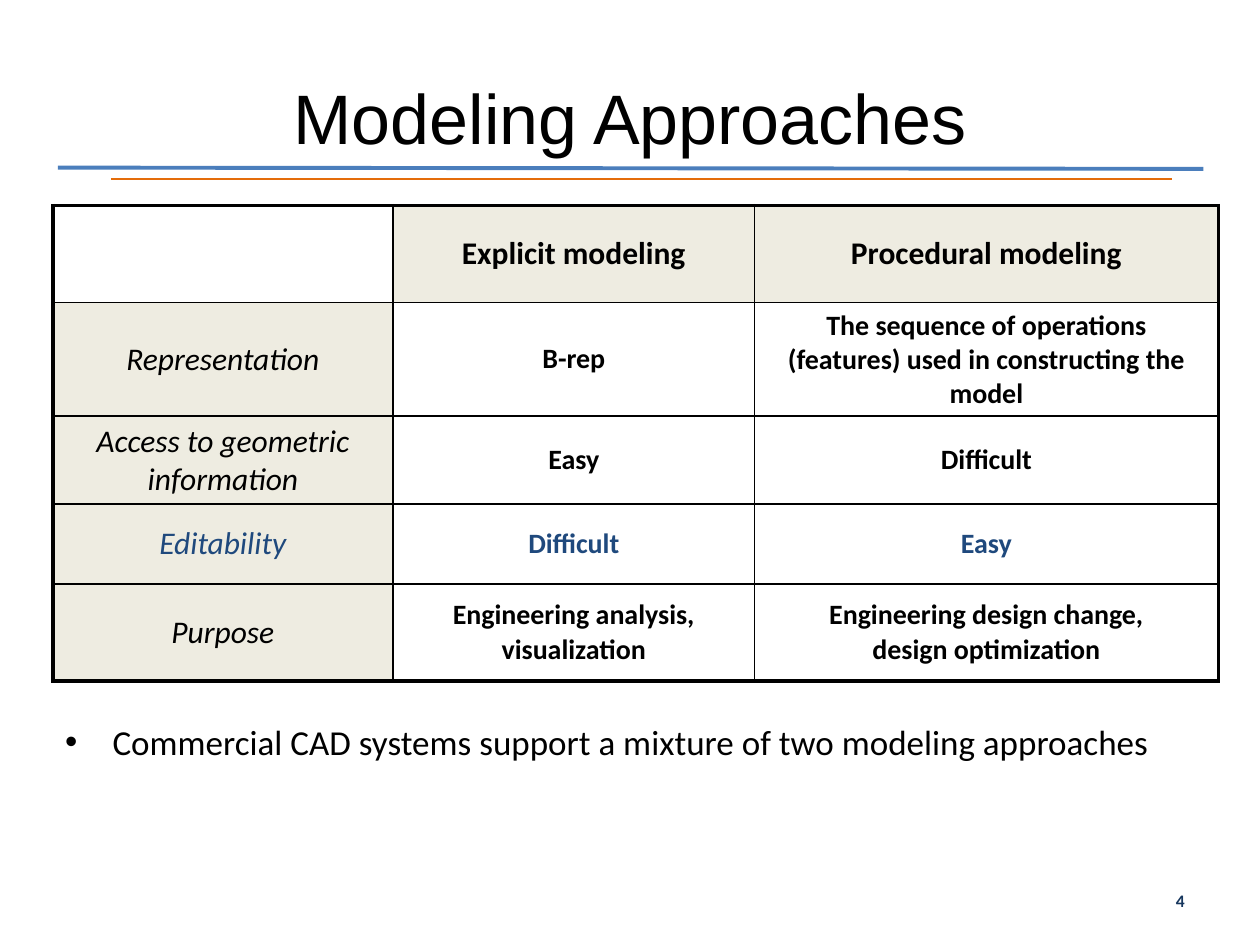
from dataclasses import dataclass

from lxml import etree
from pptx import Presentation
from pptx.dml.color import RGBColor
from pptx.enum import shapes, text
from pptx.oxml import ns
from pptx.util import Pt

BLACK = RGBColor(0x00, 0x00, 0x00)
NAVY = RGBColor(0x1F, 0x49, 0x7D)
PAGE_BLUE = RGBColor(0x17, 0x37, 0x5E)
RULE_BLUE = RGBColor(0x4B, 0x7E, 0xBC)
RULE_ORANGE = RGBColor(0xE4, 0x6C, 0x0A)
BEIGE = RGBColor(0xEE, 0xEC, 0xE1)

HEADING = {"name": "Calibri", "size": Pt(18), "bold": True, "italic": False}
ROW_LABEL = {"name": "Calibri", "size": Pt(18), "bold": False, "italic": True}
ENTRY = {"name": "Calibri", "size": Pt(16), "bold": True, "italic": False}

COLUMN_WIDTHS = (194.4, 206.6, 265)
ROW_HEIGHTS = (55.5, 59, 42, 45.5, 55.5)
ROWS = (
    ("", "Explicit modeling", "Procedural modeling"),
    ("Representation", "B-rep",
     "The sequence of operations (features) used in constructing the model"),
    ("Access to geometric information", "Easy", "Difficult"),
    ("Editability", "Difficult", "Easy"),
    ("Purpose", "Engineering analysis,\vvisualization",
     "Engineering design change,\vdesign optimization"),
)
HIGHLIGHTED_ROW = 3
OUTER_WIDTH, INNER_WIDTH = 2.25, 1


@dataclass(frozen=True)
class Rule:
    """A line under the title, in points."""
    left: float
    top: float
    right: float
    bottom: float
    width: float
    color: RGBColor


@dataclass(frozen=True)
class Label:
    """A text box, in points."""
    words: str
    left: float
    top: float
    width: float
    height: float
    font: dict
    color: RGBColor
    align: text.PP_ALIGN
    anchor: text.MSO_ANCHOR
    bullet_indent: float = 0


RULES = (
    Rule(33.1, 95.8, 687.6, 96.5, 2.25, RULE_BLUE),
    Rule(63.4, 102.2, 669.6, 102.2, 1.25, RULE_ORANGE),
)
LABELS = (
    Label("Commercial CAD systems support a mixture of two modeling approaches",
          30.2, 408.2, 642.2, 77.8, {"name": "Calibri", "size": Pt(20)}, BLACK,
          text.PP_ALIGN.LEFT, text.MSO_ANCHOR.TOP, 27),
    Label("Modeling Approaches", 36, 21.6, 648, 90,
          {"name": "Arial", "size": Pt(40)}, BLACK,
          text.PP_ALIGN.CENTER, text.MSO_ANCHOR.MIDDLE),
    Label("4", 516.2, 500.4, 167.8, 28.8,
          {"name": "Calibri", "size": Pt(10), "bold": True}, PAGE_BLUE,
          text.PP_ALIGN.RIGHT, text.MSO_ANCHOR.MIDDLE),
)


def format_font(font, values: dict, color: RGBColor) -> None:
    """Apply the format values and the colour to a font."""
    for name, value in values.items():
        setattr(font, name, value)
    font.color.rgb = color


def draw_rule(slide, rule: Rule) -> None:
    """Draw a straight line without a shadow."""
    line = slide.shapes.add_connector(
        shapes.MSO_CONNECTOR.STRAIGHT,
        Pt(rule.left), Pt(rule.top), Pt(rule.right), Pt(rule.bottom))
    line.line.width = Pt(rule.width)
    line.line.color.rgb = rule.color
    etree.SubElement(line._element.spPr, ns.qn("a:effectLst"))


def draw_label(slide, label: Label) -> None:
    """Draw a wrapped text box, bulleted when it has an indent."""
    box = slide.shapes.add_textbox(
        Pt(label.left), Pt(label.top), Pt(label.width), Pt(label.height))
    frame = box.text_frame
    frame.word_wrap = True
    frame.vertical_anchor = label.anchor
    paragraph = frame.paragraphs[0]
    paragraph.text = label.words
    paragraph.alignment = label.align
    if label.bullet_indent:
        properties = paragraph._p.get_or_add_pPr()
        properties.set("marL", str(Pt(label.bullet_indent)))
        properties.set("indent", str(-Pt(label.bullet_indent)))
        etree.SubElement(properties, ns.qn("a:buFont"), typeface="Arial")
        etree.SubElement(properties, ns.qn("a:buChar"), char="•")
    format_font(paragraph.font, label.font, label.color)


def draw_borders(cell, outer_sides: dict) -> None:
    """Give a cell black borders, thicker on the outer sides."""
    properties = cell._tc.get_or_add_tcPr()
    for side, is_outer in outer_sides.items():
        width = OUTER_WIDTH if is_outer else INNER_WIDTH
        border = etree.SubElement(
            properties, ns.qn(f"a:ln{side}"), w=str(Pt(width)))
        fill = etree.SubElement(border, ns.qn("a:solidFill"))
        etree.SubElement(fill, ns.qn("a:srgbClr"), val=str(BLACK))


def fill_cell(cell, row: int, column: int, words: str) -> None:
    """Write and format one table cell."""
    draw_borders(cell, {
        "L": column == 0, "R": column == len(COLUMN_WIDTHS) - 1,
        "T": row == 0, "B": row == len(ROW_HEIGHTS) - 1})
    if words and (row == 0 or column == 0):
        cell.fill.solid()
        cell.fill.fore_color.rgb = BEIGE
    else:
        cell.fill.background()
    cell.vertical_anchor = text.MSO_ANCHOR.MIDDLE
    paragraph = cell.text_frame.paragraphs[0]
    paragraph.text = words
    paragraph.alignment = text.PP_ALIGN.CENTER
    values = HEADING if row == 0 else ROW_LABEL if column == 0 else ENTRY
    format_font(paragraph.font, values, NAVY if row == HIGHLIGHTED_ROW else BLACK)


def draw_comparison(slide) -> None:
    """Draw the table that compares the modeling approaches."""
    table = slide.shapes.add_table(
        len(ROW_HEIGHTS), len(COLUMN_WIDTHS), Pt(30.2), Pt(117.4),
        Pt(sum(COLUMN_WIDTHS)), Pt(sum(ROW_HEIGHTS))).table
    table.first_row = table.horz_banding = False
    for column, width in zip(table.columns, COLUMN_WIDTHS):
        column.width = Pt(width)
    for row, height in zip(table.rows, ROW_HEIGHTS):
        row.height = Pt(height)
    for row, entries in enumerate(ROWS):
        for column, words in enumerate(entries):
            fill_cell(table.cell(row, column), row, column, words)


def main() -> None:
    """Build the slide and save it."""
    presentation = Presentation()
    presentation.slide_width, presentation.slide_height = Pt(720), Pt(540)
    slide = presentation.slides.add_slide(presentation.slide_layouts[6])
    for rule in RULES:
        draw_rule(slide, rule)
    for label in LABELS:
        draw_label(slide, label)
    draw_comparison(slide)
    presentation.save("out.pptx")


if __name__ == "__main__":
    main()
